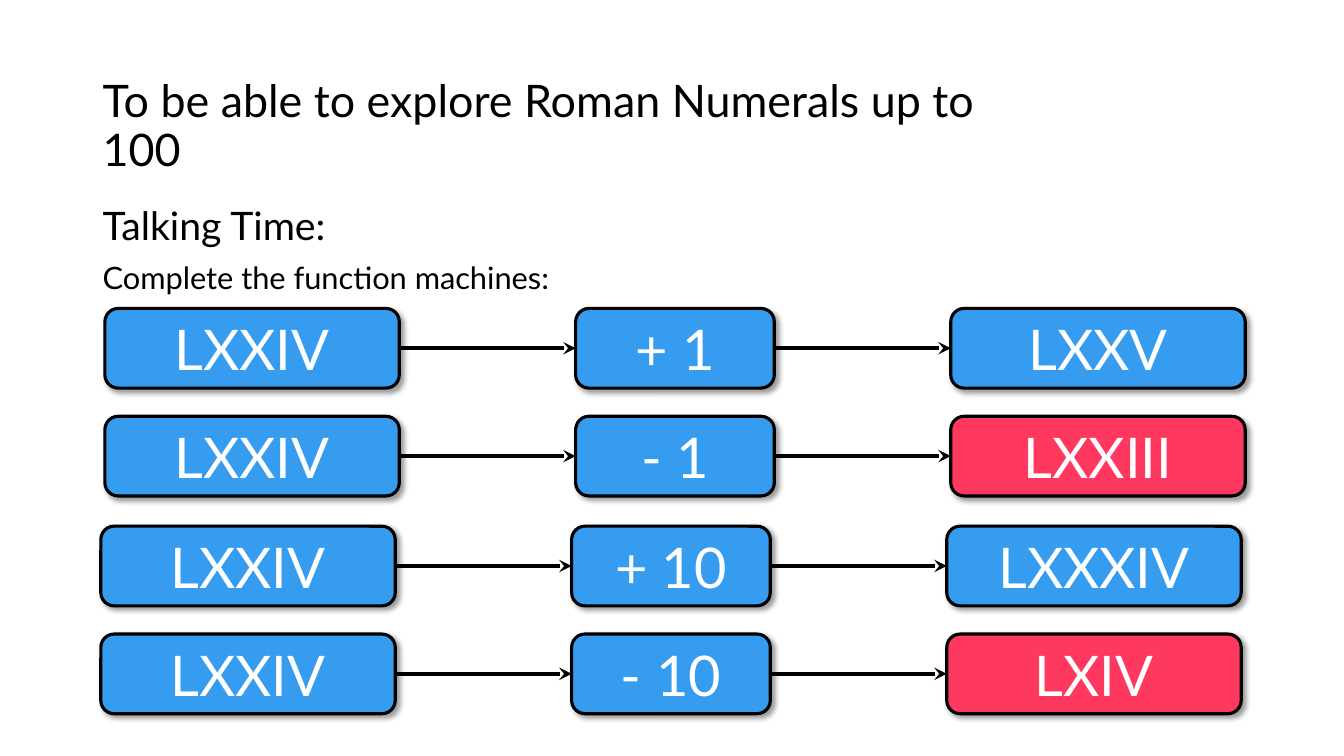
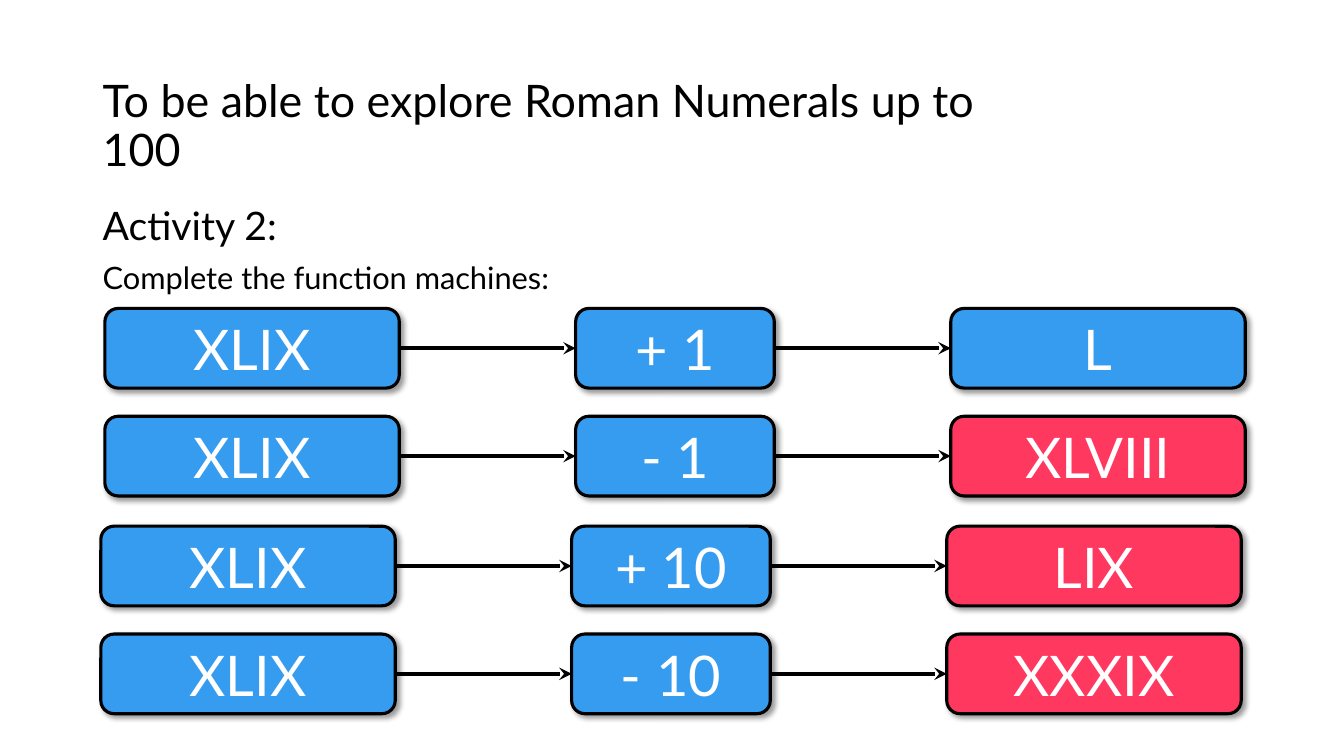
"""Build two slides of Roman numeral function machines."""
from dataclasses import dataclass
from itertools import pairwise

from lxml import etree
from pptx import Presentation
from pptx.dml.color import RGBColor
from pptx.enum.shapes import MSO_CONNECTOR, MSO_SHAPE
from pptx.enum.text import MSO_ANCHOR, PP_ALIGN
from pptx.oxml.ns import qn
from pptx.util import Inches, Pt

ROUNDED = MSO_SHAPE.ROUNDED_RECTANGLE
STRAIGHT = MSO_CONNECTOR.STRAIGHT
TOP, MIDDLE = MSO_ANCHOR.TOP, MSO_ANCHOR.MIDDLE
CENTER = PP_ALIGN.CENTER
LEFT_SIDE, RIGHT_SIDE = 1, 3


@dataclass(frozen=True)
class Theme:
    """Colours, font, type sizes and line widths of the deck."""
    font: str = "Lato"
    ink: RGBColor = RGBColor.from_string("000000")
    paper: RGBColor = RGBColor.from_string("FFFFFF")
    given: RGBColor = RGBColor.from_string("369CEF")
    answer: RGBColor = RGBColor.from_string("FF3860")
    title: int = 32
    heading: int = 28
    task: int = 22
    numeral: int = 40
    outline: float = 2.25
    arrow: float = 3


THEME = Theme()
TITLE = "To be able to explore Roman Numerals up to 100"
TASK = "Complete the function machines:"
TITLE_BOX = (0.92, 0.54, 9.6, 1.45)
BODY_BOX = (0.92, 2, 11.5, 4.76)
PAIR_ORIGINS = ((1.04, 3.06), (1, 5.22))
ROW_STEP = 1.07
CELL_WIDTHS = (2.92, 1.97, 2.92)
CELL_HEIGHT = 0.79
CELL_GAP = 1.75
OPERATIONS = ("+ 1", "- 1", "+ 10", "- 10")

PAGES = (
    ("Talking Time:", "LXXIV",
     (("LXXV", THEME.given), ("LXXIII", THEME.answer),
      ("LXXXIV", THEME.given), ("LXIV", THEME.answer))),
    ("Activity 2:", "XLIX",
     (("L", THEME.given), ("XLVIII", THEME.answer),
      ("LIX", THEME.answer), ("XXXIX", THEME.answer))),
)


def style_paragraph(para, text, size, color):
    """Fill a paragraph and set its font."""
    para.text = text
    para.font.name = THEME.font
    para.font.size = Pt(size)
    para.font.color.rgb = color


def add_text(page, area, lines, anchor):
    """Place a text box holding lines of (text, size)."""
    frame = page.shapes.add_textbox(*map(Inches, area)).text_frame
    frame.word_wrap = True
    frame.vertical_anchor = anchor
    for index, (text, size) in enumerate(lines):
        para = frame.add_paragraph() if index else frame.paragraphs[0]
        style_paragraph(para, text, size, THEME.ink)
        para.line_spacing = 0.9
        if index:
            para.space_before = Pt(10)


def add_shadow(box):
    """Give a box a soft shadow to the lower right."""
    box.shadow.inherit = False
    effects = box._element.spPr.find(qn("a:effectLst"))
    shadow = etree.SubElement(
        effects, qn("a:outerShdw"), blurRad=str(Pt(4)), dist=str(Pt(3)),
        dir=str(45 * 60000), algn="tl", rotWithShape="0")
    color = etree.SubElement(shadow, qn("a:srgbClr"), val=str(THEME.ink))
    etree.SubElement(color, qn("a:alpha"), val="40000")


def add_cell(page, area, text, fill):
    """Place one rounded box of a function machine."""
    box = page.shapes.add_shape(ROUNDED, *map(Inches, area))
    box.fill.solid()
    box.fill.fore_color.rgb = fill
    box.line.color.rgb = THEME.ink
    box.line.width = Pt(THEME.outline)
    add_shadow(box)
    box.text_frame.vertical_anchor = MIDDLE
    para = box.text_frame.paragraphs[0]
    style_paragraph(para, text, THEME.numeral, THEME.paper)
    para.alignment = CENTER
    return box


def add_arrow(page, source, target):
    """Join two boxes with an arrow."""
    arrow = page.shapes.add_connector(STRAIGHT, 0, 0, 0, 0)
    arrow.begin_connect(source, RIGHT_SIDE)
    arrow.end_connect(target, LEFT_SIDE)
    arrow.line.color.rgb = THEME.ink
    arrow.line.width = Pt(THEME.arrow)
    properties = arrow._element.spPr
    etree.SubElement(properties.find(qn("a:ln")), qn("a:tailEnd"), type="stealth")
    etree.SubElement(properties, qn("a:effectLst"))


def add_machine(page, left, top, cells):
    """Place a row of boxes joined by arrows."""
    boxes = []
    for width, (text, fill) in zip(CELL_WIDTHS, cells):
        boxes.append(add_cell(page, (left, top, width, CELL_HEIGHT), text, fill))
        left += width + CELL_GAP
    for source, target in pairwise(boxes):
        add_arrow(page, source, target)


def add_page(deck, heading, start, results):
    """Add a slide with its title, task and four function machines."""
    page = deck.slides.add_slide(deck.slide_layouts[6])
    add_text(page, TITLE_BOX, [(TITLE, THEME.title)], MIDDLE)
    add_text(page, BODY_BOX, [(heading, THEME.heading), (TASK, THEME.task)], TOP)
    for index, (operation, result) in enumerate(zip(OPERATIONS, results)):
        pair, row = divmod(index, 2)
        left, top = PAIR_ORIGINS[pair]
        cells = ((start, THEME.given), (operation, THEME.given), result)
        add_machine(page, left, top + row * ROW_STEP, cells)


def main():
    """Build and save the deck."""
    deck = Presentation()
    deck.slide_width = Inches(13.33)
    deck.slide_height = Inches(7.5)
    for content in PAGES:
        add_page(deck, *content)
    deck.save("out.pptx")


if __name__ == "__main__":
    main()
